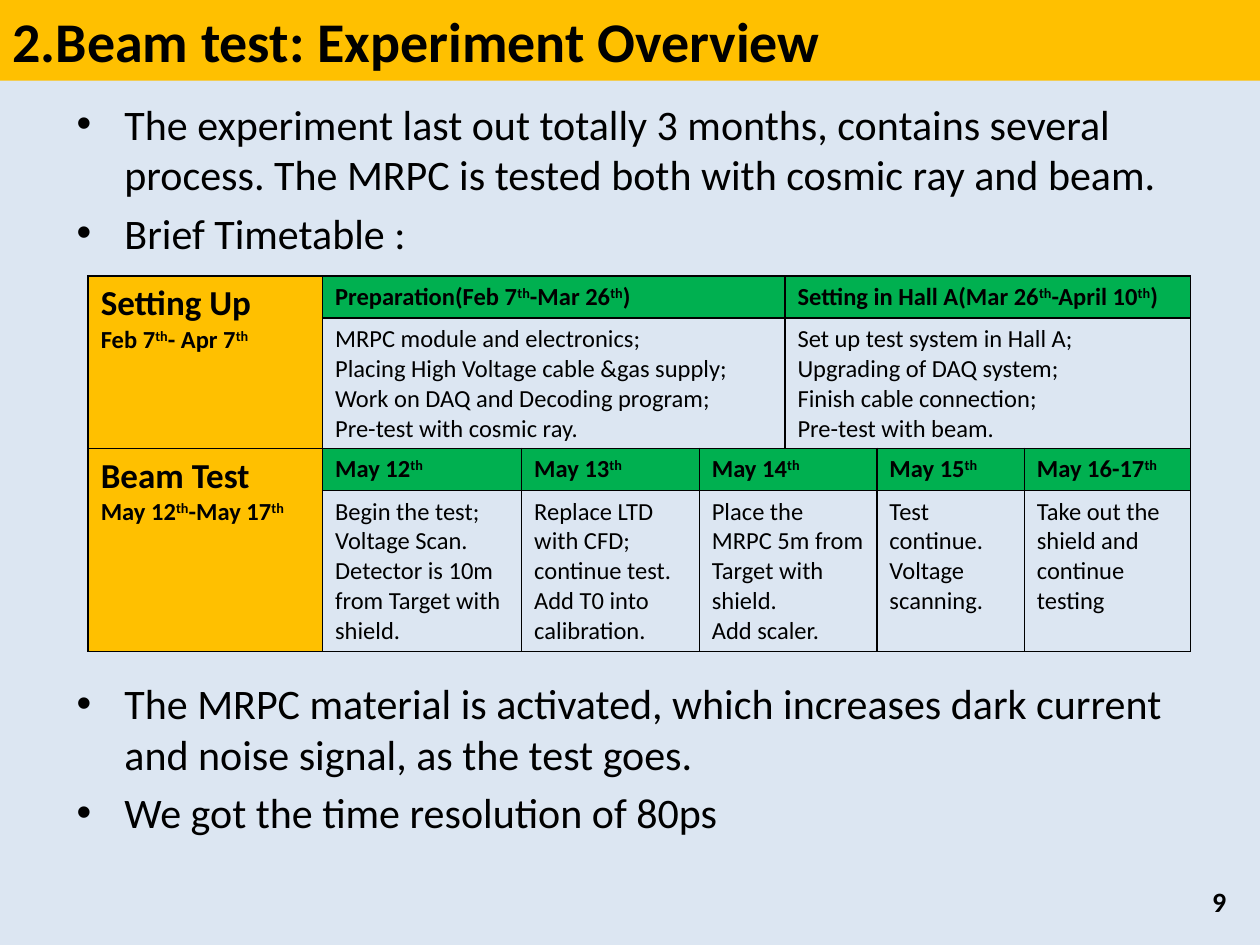
"""Build the beam test overview slide with its timetable."""
import dataclasses

import pptx
import pptx.dml.color
import pptx.enum.shapes
import pptx.enum.text
import pptx.oxml
import pptx.oxml.ns
import pptx.util

Inches = pptx.util.Inches
Pt = pptx.util.Pt
ALIGN = pptx.enum.text.PP_ALIGN
ANCHOR = pptx.enum.text.MSO_ANCHOR

COLORS = {"bg": "DCE6F2", "gold": "FFC000", "green": "00B050", "black": "000000"}
COLS = [1.86, 1.58, 1.41, 0.68, 0.73, 1.17, 1.32]
ROWS = [0.33, 1.03, 0.33, 1.28]


@dataclasses.dataclass
class Line:
    text: str
    size: float = 14
    bold: bool = False


@dataclasses.dataclass
class Stage:
    row: int
    title: str
    dates: str


@dataclasses.dataclass
class Step:
    row: int
    col: int
    span: int
    title: str
    tasks: list[str]


STAGES = [
    Stage(0, "Setting Up", "Feb 7^th^- Apr 7^th"),
    Stage(2, "Beam Test", "May 12^th^-May 17^th"),
]
STEPS = [
    Step(0, 1, 3, "Preparation(Feb 7^th^-Mar 26^th^)", [
        "MRPC module and electronics;",
        "Placing High Voltage cable &gas supply; Work on DAQ and Decoding program;",
        "Pre-test with cosmic ray."]),
    Step(0, 4, 3, "Setting in Hall A(Mar 26^th^-April 10^th^)", [
        "Set up test system in Hall A; Upgrading of DAQ system;",
        "Finish cable connection;",
        "Pre-test with beam."]),
    Step(2, 1, 1, "May 12^th", [
        "Begin the test;", "Voltage Scan.", "Detector is 10m from Target with shield."]),
    Step(2, 2, 1, "May 13^th", [
        "Replace LTD with CFD; continue test.", "Add T0 into calibration."]),
    Step(2, 3, 2, "May 14^th", [
        "Place the MRPC 5m from Target with shield.", "Add scaler."]),
    Step(2, 5, 1, "May 15^th", ["Test continue. Voltage scanning."]),
    Step(2, 6, 1, "May 16-17^th", ["Take out the shield and continue testing"]),
]
BULLETS = {
    0.73: ["The experiment last out totally 3 months, contains several process. "
           "The MRPC is tested both with cosmic ray and beam.",
           "Brief Timetable :"],
    5.33: ["The MRPC material is activated, which increases dark current "
           "and noise signal, as the test goes.",
           "We got the time resolution of 80ps"],
}


def rgb(name: str) -> pptx.dml.color.RGBColor:
    return pptx.dml.color.RGBColor.from_string(COLORS[name])


def paint(fill, name: str) -> None:
    fill.solid()
    fill.fore_color.rgb = rgb(name)


def write(tf, lines: list[Line], align=ALIGN.LEFT) -> None:
    tf.word_wrap = True
    for i, line in enumerate(lines):
        p = tf.add_paragraph() if i else tf.paragraphs[0]
        p.alignment = align
        for j, part in enumerate(filter(None, line.text.split("^"))):
            r = p.add_run()
            r.text = part
            values = {"name": "Calibri", "size": Pt(line.size), "bold": line.bold}
            for key, value in values.items():
                setattr(r.font, key, value)
            r.font.color.rgb = rgb("black")
            if j % 2:
                r._r.get_or_add_rPr().set("baseline", "30000")


def add_bullets(s, top: float, texts: list[str]) -> None:
    sp = s.shapes.add_textbox(Inches(0.51), Inches(top), Inches(9), Inches(1.4))
    write(sp.text_frame, [Line(text, 24) for text in texts])
    for p in sp.text_frame.paragraphs:
        p.space_before = Pt(4.8)
        pPr = p._p.get_or_add_pPr()
        pPr.set("marL", str(Inches(0.38)))
        pPr.set("indent", str(-Inches(0.38)))
        ns = pptx.oxml.ns.nsdecls("a")
        for xml in (f'<a:buFont {ns} typeface="Arial"/>', f'<a:buChar {ns} char="•"/>'):
            pPr.append(pptx.oxml.parse_xml(xml))


def add_borders(cell) -> None:
    tcPr = cell._tc.get_or_add_tcPr()
    for side in "LRTB":
        tcPr.append(pptx.oxml.parse_xml(
            f'<a:ln{side} {pptx.oxml.ns.nsdecls("a")} w="{Pt(1)}"><a:solidFill>'
            f'<a:srgbClr val="{COLORS["black"]}"/></a:solidFill></a:ln{side}>'))


def add_timetable(s) -> None:
    table = s.shapes.add_table(len(ROWS), len(COLS), Inches(0.7), Inches(2.19),
                               Inches(sum(COLS)), Inches(sum(ROWS))).table
    table.first_row = table.horz_banding = False
    for col, width in zip(table.columns, COLS):
        col.width = Inches(width)
    for row, height in zip(table.rows, ROWS):
        row.height = Inches(height)
    for cell in table.iter_cells():
        add_borders(cell)
        cell.fill.background()
    for stage in STAGES:
        cell = table.cell(stage.row, 0)
        cell.merge(table.cell(stage.row + 1, 0))
        paint(cell.fill, "gold")
        write(cell.text_frame, [Line(stage.title, 20, True), Line(stage.dates, 14, True)])
    for step in STEPS:
        head, body = (table.cell(step.row + i, step.col) for i in (0, 1))
        if step.span > 1:
            for i, cell in enumerate((head, body)):
                cell.merge(table.cell(step.row + i, step.col + step.span - 1))
        paint(head.fill, "green")
        write(head.text_frame, [Line(step.title, bold=True)])
        write(body.text_frame, [Line(task) for task in step.tasks])


def add_title(s, text: str) -> None:
    sp = s.shapes.add_shape(pptx.enum.shapes.MSO_SHAPE.RECTANGLE,
                            0, 0, Inches(10), Inches(0.64))
    sp.shadow.inherit = False
    paint(sp.fill, "gold")
    sp.line.fill.background()
    sp.text_frame.vertical_anchor = ANCHOR.TOP
    write(sp.text_frame, [Line(text, 32, True)])


def add_page_number(s, number: str) -> None:
    sp = s.shapes.add_textbox(Inches(7.5), Inches(6.95), Inches(2.33), Inches(0.4))
    sp.text_frame.vertical_anchor = ANCHOR.MIDDLE
    write(sp.text_frame, [Line(number, 16, True)], ALIGN.RIGHT)


def main() -> None:
    prs = pptx.Presentation()
    prs.slide_width, prs.slide_height = Inches(10), Inches(7.5)
    s = prs.slides.add_slide(prs.slide_layouts[6])
    paint(s.background.fill, "bg")
    for top, texts in BULLETS.items():
        add_bullets(s, top, texts)
    add_title(s, "2.Beam test: Experiment Overview")
    add_page_number(s, "9")
    add_timetable(s)
    prs.save("out.pptx")


if __name__ == "__main__":
    main()
